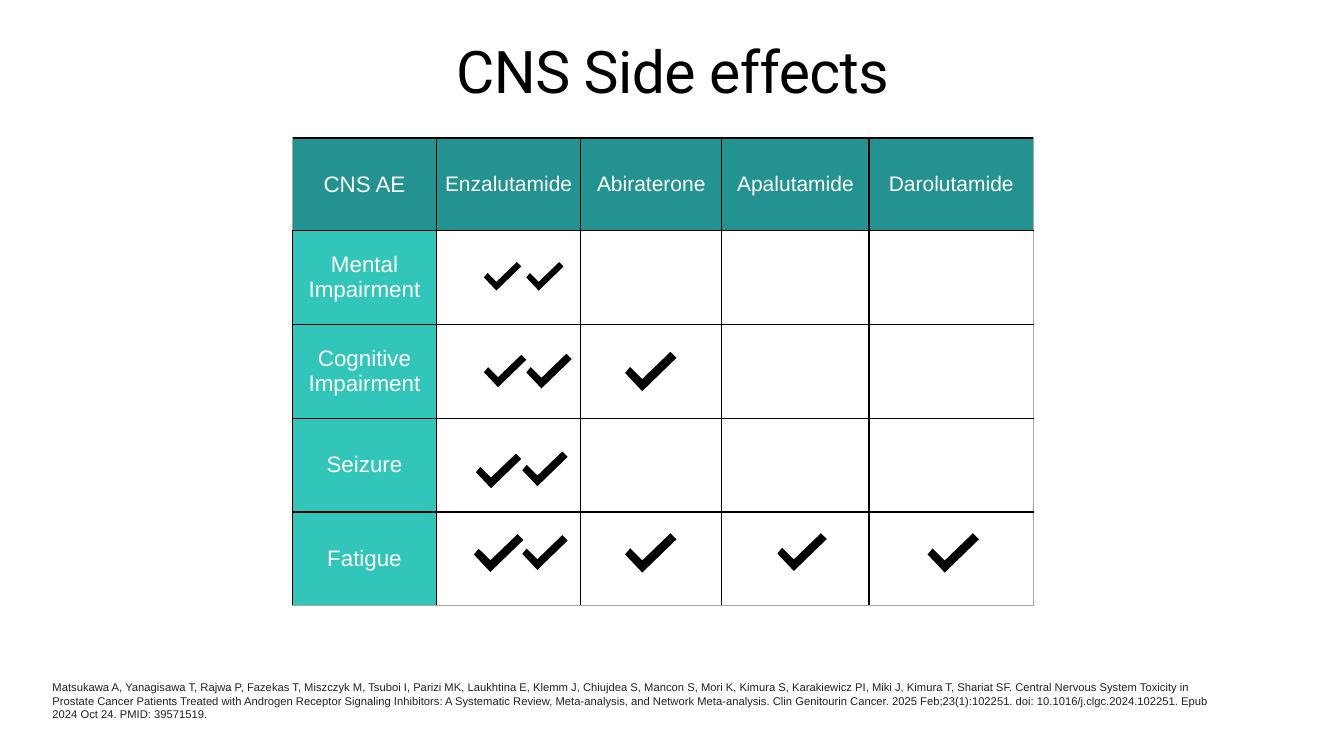
from dataclasses import dataclass
from pptx import Presentation
from pptx.dml.color import RGBColor
from pptx.enum.text import MSO_ANCHOR, PP_ALIGN
from pptx.oxml import parse_xml
from pptx.oxml.ns import nsdecls

PX = 9144  # 100 px to the inch


@dataclass(frozen=True)
class Theme:
    head: str = "239290"
    side: str = "32C5B9"
    ink: str = "000000"
    white: str = "FFFFFF"
    edge: str = "A6AAA9"
    note: str = "212121"
    title_font: str = "Roboto"
    font: str = "Arial"
    title_pt: int = 42
    label_pt: int = 16
    drug_pt: int = 15
    note_pt: int = 8


THEME = Theme()
DRUGS = ["Enzalutamide", "Abiraterone", "Apalutamide", "Darolutamide"]
EFFECTS = ["Mental Impairment", "Cognitive Impairment", "Seizure", "Fatigue"]
COLS = [143, 143, 140, 146, 163]
ROWS = [92, 93, 93, 93, 93]
# left, top and width of each check mark, relative to the table
TICKS = [
    (190, 123, 37), (232, 123, 37),
    (190, 215, 42), (232, 214, 45), (330, 212, 51),
    (182, 313, 45), (228, 311, 45),
    (180, 393, 49), (228, 394, 45), (330, 392, 51), (481, 392, 49), (630, 392, 51),
]
MARK = [(45, 0), (17, 27), (5, 15), (0, 21), (17, 39), (51, 6)]
CITE = (
    "Matsukawa A, Yanagisawa T, Rajwa P, Fazekas T, Miszczyk M, Tsuboi I, Parizi MK, "
    "Laukhtina E, Klemm J, Chiujdea S, Mancon S, Mori K, Kimura S, Karakiewicz PI, Miki J, "
    "Kimura T, Shariat SF. Central Nervous System Toxicity in Prostate Cancer Patients Treated "
    "with Androgen Receptor Signaling Inhibitors: A Systematic Review, Meta-analysis, and "
    "Network Meta-analysis. Clin Genitourin Cancer. 2025 Feb;23(1):102251. "
    "doi: 10.1016/j.clgc.2024.102251. Epub 2024 Oct 24. PMID: 39571519."
)


def emu(*sizes):
    return [size * PX for size in sizes]


def write(frame, text, size, color, font=THEME.font, align=PP_ALIGN.CENTER,
          lead=None, track=None):
    par = frame.paragraphs[0]
    par.alignment = align
    if lead:
        par.line_spacing = lead
    run = par.add_run()
    run.text = text
    run.font.size = size * 12700
    run.font.name = font
    run.font.color.rgb = RGBColor.from_string(color)
    if track:
        run._r.get_or_add_rPr().set("spc", str(track))


def inset(item, gap):
    item.margin_left = item.margin_right = gap * PX
    item.margin_top = item.margin_bottom = gap * PX


def rule(cell, side, color, width):
    cell._tc.get_or_add_tcPr().append(parse_xml(
        f'<a:ln{side} {nsdecls("a")} w="{width}"><a:solidFill>'
        f'<a:srgbClr val="{color}"/></a:solidFill></a:ln{side}>'))


def title(slide, box):
    shape = slide.shapes.title
    shape.left, shape.top, shape.width, shape.height = emu(*box)
    frame = shape.text_frame
    frame.word_wrap = True
    frame.vertical_anchor = MSO_ANCHOR.TOP
    inset(frame, 6)
    write(frame, "CNS Side effects", THEME.title_pt, THEME.ink,
          font=THEME.title_font, lead=0.8, track=-40)


def style(cell, row, col):
    """Set the borders, fill and margins that go with a place in the grid."""
    last_row, last_col = len(ROWS) - 1, len(COLS) - 1
    rule(cell, "L", THEME.edge if row == col == 0 else THEME.ink, 12700)
    rule(cell, "R", THEME.edge if col == last_col else THEME.ink, 12700)
    rule(cell, "T", THEME.ink, 25400 if row == 0 else 12700)
    rule(cell, "B", THEME.edge if row == last_row else THEME.ink, 12700)
    if row and col:
        cell.fill.background()
    else:
        cell.fill.solid()
        cell.fill.fore_color.rgb = RGBColor.from_string(THEME.side if row else THEME.head)
    cell.vertical_anchor = MSO_ANCHOR.MIDDLE
    inset(cell, 3)


def grid(slide, box):
    table = slide.shapes.add_table(len(ROWS), len(COLS), *emu(*box)).table
    table.first_row = table.horz_banding = False
    for col, width in zip(table.columns, COLS):
        col.width = width * PX
    for row, height in zip(table.rows, ROWS):
        row.height = height * PX
    for row in range(len(ROWS)):
        for col in range(len(COLS)):
            style(table.cell(row, col), row, col)
    for row, name in enumerate(["CNS AE"] + EFFECTS):
        write(table.cell(row, 0).text_frame, name, THEME.label_pt, THEME.white)
    for col, name in enumerate(DRUGS, 1):
        write(table.cell(0, col).text_frame, name, THEME.drug_pt, THEME.white)


def ticks(slide, box):
    for left, top, width in TICKS:
        pen = slide.shapes.build_freeform(*MARK[0], scale=width * PX / 51)
        pen.add_line_segments(MARK[1:], close=True)
        shape = pen.convert_to_shape(*emu(box[0] + left, box[1] + top))
        shape.shadow.inherit = False
        shape.fill.solid()
        shape.fill.fore_color.rgb = RGBColor.from_string(THEME.ink)
        shape.line.fill.background()


def source(slide, box):
    frame = slide.shapes.add_textbox(*emu(*box)).text_frame
    frame.word_wrap = True
    frame.vertical_anchor = MSO_ANCHOR.MIDDLE
    inset(frame, 3)
    write(frame, CITE, THEME.note_pt, THEME.note, align=PP_ALIGN.LEFT)


def main():
    deck = Presentation()
    deck.slide_width, deck.slide_height = emu(1333, 750)
    slide = deck.slides.add_slide(deck.slide_layouts[5])
    area = (290, 137, sum(COLS), sum(ROWS))
    title(slide, (67, 42, 1200, 94))
    grid(slide, area)
    ticks(slide, area)
    source(slide, (49, 672, 1179, 46))
    deck.save("out.pptx")


if __name__ == "__main__":
    main()
